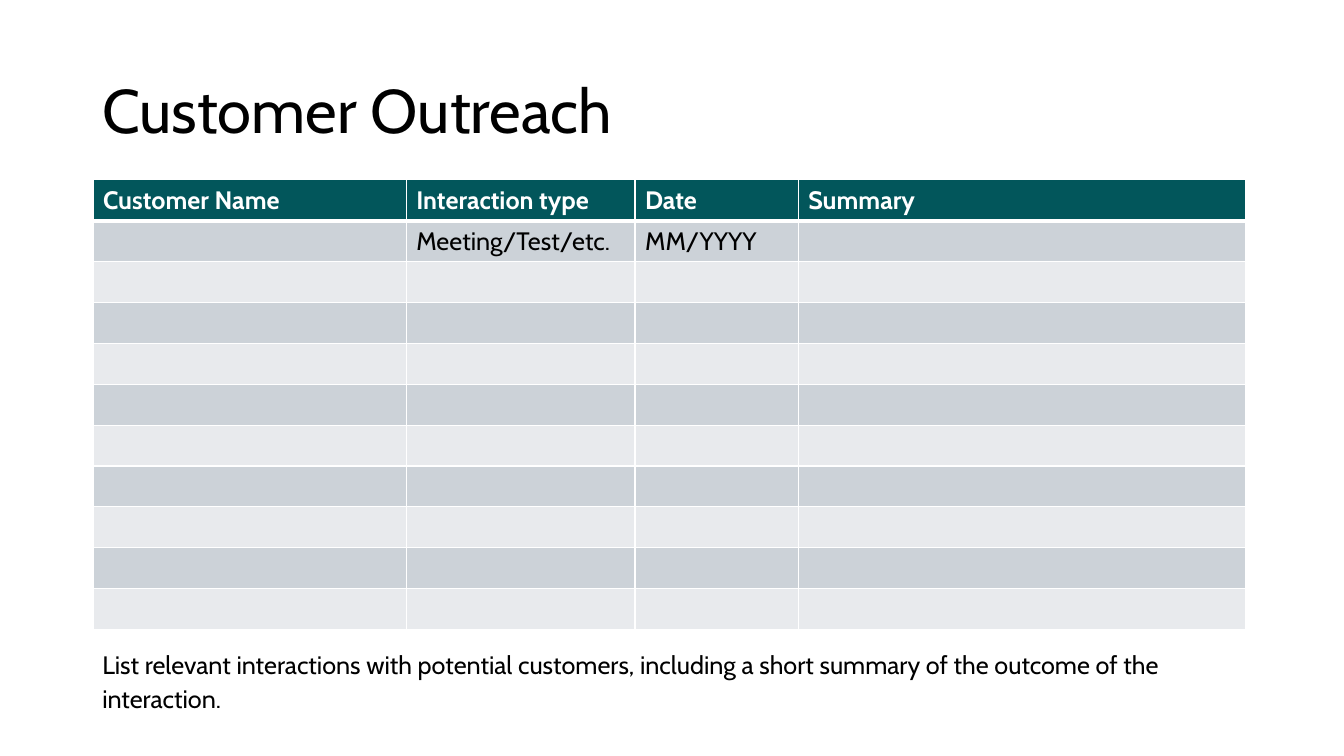
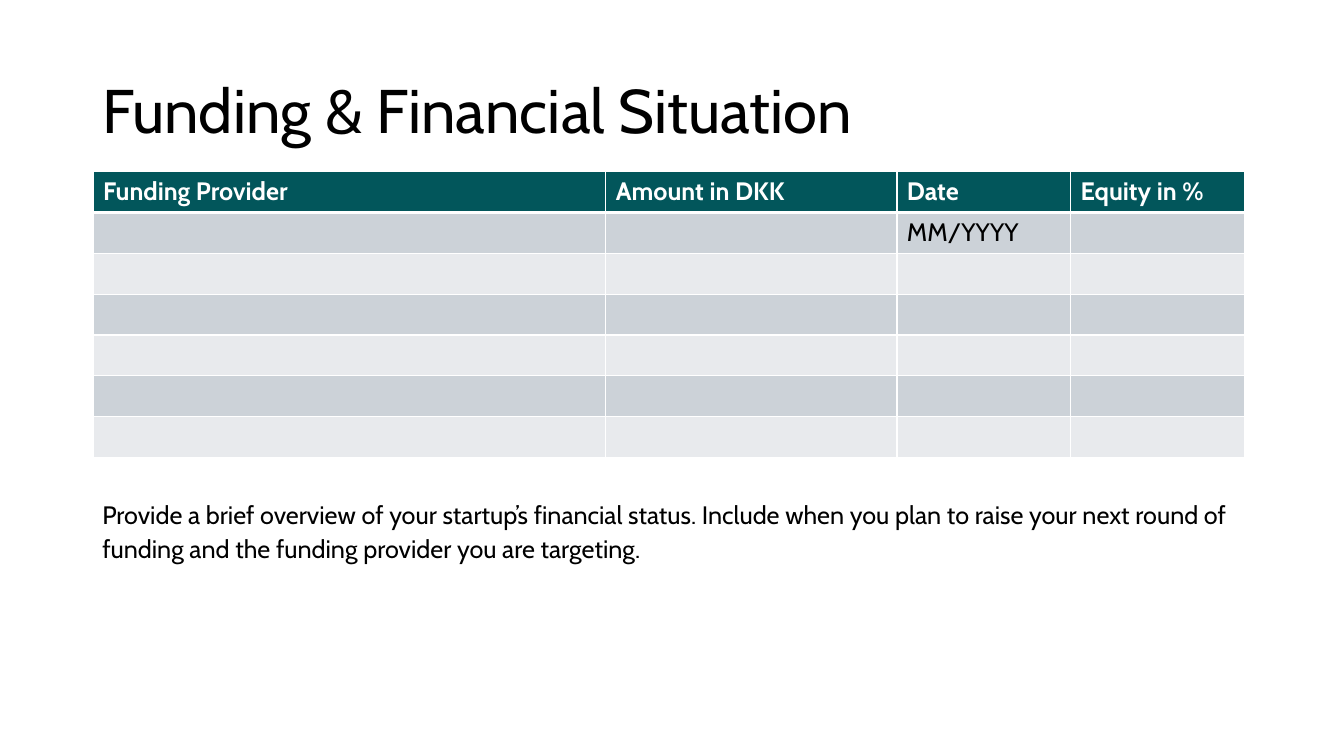
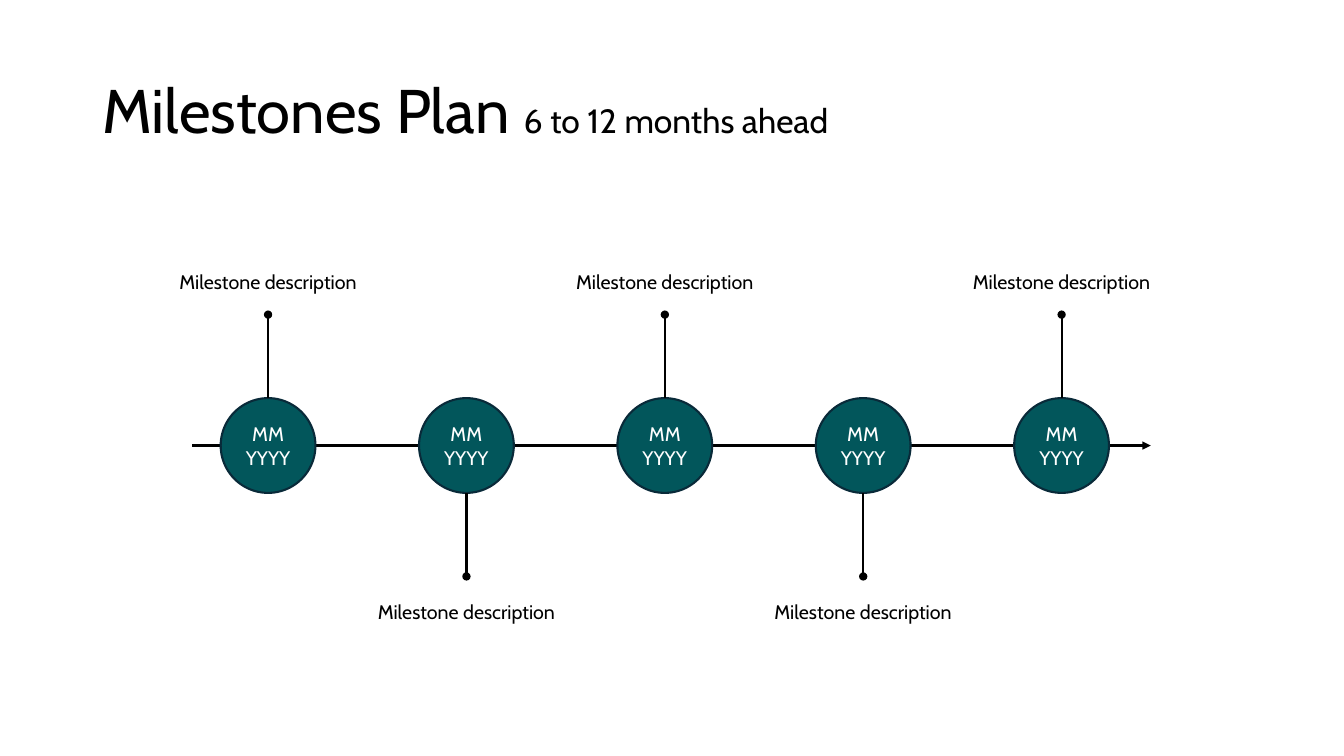
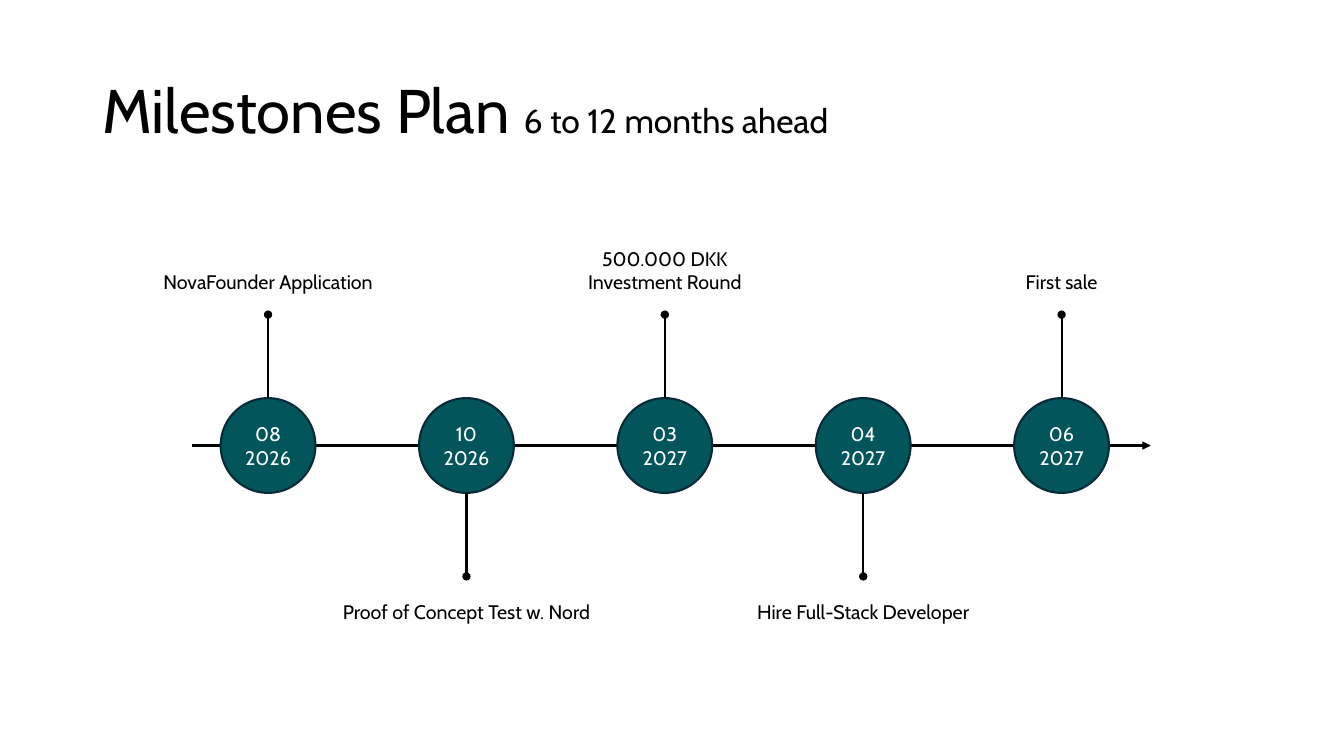
from pptx import Presentation
from pptx.dml.color import RGBColor
from pptx.enum.shapes import MSO_CONNECTOR, MSO_SHAPE
from pptx.enum.text import MSO_ANCHOR, MSO_AUTO_SIZE, PP_ALIGN
from pptx.oxml.ns import qn
from pptx.util import Pt
from lxml import etree

LEFT, CENTER = PP_ALIGN.LEFT, PP_ALIGN.CENTER
TOP, MIDDLE, BOTTOM = MSO_ANCHOR.TOP, MSO_ANCHOR.MIDDLE, MSO_ANCHOR.BOTTOM
FIXED = MSO_AUTO_SIZE.NONE
STRAIGHT = MSO_CONNECTOR.STRAIGHT
OVAL = MSO_SHAPE.OVAL

FONT = "Cabin"
TEAL, NAVY, BLACK, WHITE = "02565B", "092A39", "000000", "FFFFFF"
BANDS = ("CCD2D8", "E8EAED")
TITLE = (66, 28.8, 828, 104.4)
RAIL = (137.5, 172, 684.5, 292.5)
ROW = 29.2


def color(value):
    return RGBColor.from_string(value)


def place(box):
    return [Pt(n) for n in box]


def paint(item, value):
    item.fill.solid()
    item.fill.fore_color.rgb = color(value)


def text(frame, lines, size=18, ink=BLACK, bold=False, align=LEFT, space=1.0):
    for i, line in enumerate(lines):
        para = frame.paragraphs[0] if i == 0 else frame.add_paragraph()
        para.alignment = align
        para.line_spacing = space
        runs = [(line, size)] if isinstance(line, str) else line
        for words, points in runs:
            run = para.add_run()
            run.text = words
            font = run.font
            font.name, font.size, font.bold = FONT, Pt(points), bold
            font.color.rgb = color(ink)


def label(slide, box, lines, anchor=TOP, **style):
    frame = slide.shapes.add_textbox(*place(box)).text_frame
    frame.word_wrap = True
    frame.vertical_anchor = anchor
    text(frame, lines, **style)


def page(deck, title):
    slide = deck.slides.add_slide(deck.slide_layouts[5])
    head = slide.shapes.title
    head.left, head.top, head.width, head.height = place(TITLE)
    frame = head.text_frame
    frame.auto_size = FIXED
    frame.vertical_anchor = MIDDLE
    text(frame, [title], size=44, space=0.9)
    return slide


def border(cell, **sides):
    props = cell._tc.get_or_add_tcPr()
    for side in "LRTB":
        width = sides.get(side, 1)
        line = etree.SubElement(props, qn("a:ln" + side), w=str(Pt(width)))
        fill = etree.SubElement(line, qn("a:solidFill"))
        etree.SubElement(fill, qn("a:srgbClr"), val=WHITE)


def grid(slide, spot, widths, heads, first, rows):
    box = (*spot, sum(widths), ROW * rows)
    frame = slide.shapes.add_table(rows, len(widths), *place(box))
    table = frame.table
    table.horz_banding = False
    for col, width in zip(table.columns, widths):
        col.width = Pt(width)
    for r, row in enumerate(table.rows):
        row.height = Pt(ROW)
        for c, cell in enumerate(row.cells):
            border(cell, T=3 if r == 1 else 1, B=3 if r == 0 else 1)
            paint(cell, BANDS[(r - 1) % 2] if r else TEAL)
            if r == 0:
                text(cell.text_frame, [heads[c]], ink=WHITE, bold=True)
            elif r == 1 and first[c]:
                text(cell.text_frame, [first[c]])


def line(slide, start, end, **tips):
    link = slide.shapes.add_connector(STRAIGHT, *place((*start, *end)))
    link.line.color.rgb = color(BLACK)
    link.line.width = Pt(1.5)
    props = link._element.spPr
    for tip, kind in tips.items():
        etree.SubElement(props.find(qn("a:ln")), qn(f"a:{tip}End"), type=kind)
    etree.SubElement(props, qn("a:effectLst"))


def disc(slide, x, y, size, lines):
    box = (x - size / 2, y - size / 2, size, size)
    shape = slide.shapes.add_shape(OVAL, *place(box))
    shape.shadow.inherit = False
    paint(shape, TEAL)
    shape.line.color.rgb = color(NAVY)
    shape.line.width = Pt(1.5)
    frame = shape.text_frame
    frame.margin_left = frame.margin_right = 0
    frame.vertical_anchor = MIDDLE
    text(frame, lines, size=14, ink=WHITE, align=CENTER)


def track(slide, box, marks):
    left, top, width, height = box
    y = top + height / 2
    start, tail, size, reach, wide = 54, 63.7, 67.7, 93.5, 205
    step = (width - start - tail) / (len(marks) - 1)
    line(slide, (left, y), (left + width, y), tail="triangle")
    for i, (date, lines) in enumerate(marks):
        x = left + start + i * step
        way = 1 if i % 2 else -1
        disc(slide, x, y, size, date)
        line(slide, (x, y + way * reach), (x, y + way * size / 2), head="oval")
        tall = 7.2 + 17 * len(lines)
        edge = y + 106.5 if way > 0 else y - 105 - tall
        label(slide, (x - wide / 2, edge, wide, tall), lines,
              anchor=TOP if way > 0 else BOTTOM, size=14, align=CENTER)


def sheet(deck, title, top, widths, heads, first, rows, note, box):
    slide = page(deck, title)
    grid(slide, (66.5, top), widths, heads, first, rows)
    label(slide, box, [note], space=1.14)


def plan(deck, marks):
    slide = page(deck, [("Milestones Plan ", 44), ("6 to 12 months ahead", 24)])
    track(slide, RAIL, marks)


def main():
    deck = Presentation()
    deck.slide_width, deck.slide_height = Pt(960), Pt(540)
    sheet(deck, "Customer Outreach", 128.5, (223.7, 163.4, 116.6, 319.5),
          ("Customer Name", "Interaction type", "Date", "Summary"),
          ("", "Meeting/Test/etc.", "MM/YYYY", ""), 11,
          "List relevant interactions with potential customers, including a "
          "short summary of the outcome of the interaction.",
          (66, 457.2, 828, 62))
    sheet(deck, "Funding & Financial Situation", 122.5,
          (366.2, 208, 124, 124.7),
          ("Funding Provider", "Amount in DKK", "Date", "Equity in %"),
          ("", "", "MM/YYYY", ""), 7,
          "Provide a brief overview of your startup’s financial status. "
          "Include when you plan to raise your next round of funding and the "
          "funding provider you are targeting.",
          (66, 350, 828, 151))
    plan(deck, [(("MM", "YYYY"), ["Milestone description"])] * 5)
    plan(deck, [
        (("08", "2026"), ["NovaFounder Application"]),
        (("10", "2026"), ["Proof of Concept Test w. Nord"]),
        (("03", "2027"), ["500.000 DKK", "Investment Round"]),
        (("04", "2027"), ["Hire Full-Stack Developer"]),
        (("06", "2027"), ["First sale"]),
    ])
    deck.save("out.pptx")


if __name__ == "__main__":
    main()
